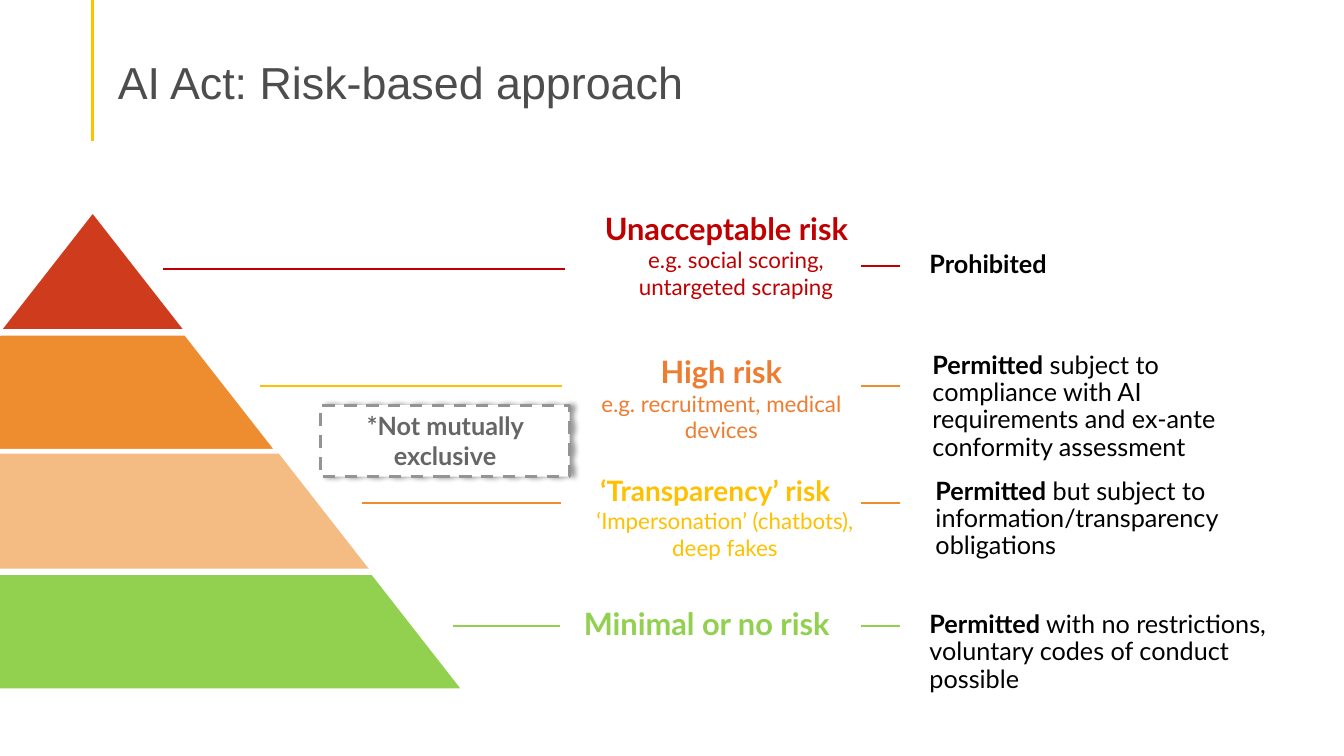
from lxml import etree
from pptx import Presentation
from pptx.dml.color import RGBColor
from pptx.enum.dml import MSO_LINE
from pptx.enum.shapes import MSO_CONNECTOR, MSO_SHAPE
from pptx.enum.text import MSO_ANCHOR, PP_ALIGN
from pptx.oxml.ns import qn
from pptx.util import Inches, Pt

COLORS = {
    "white": "FFFFFF", "black": "000000", "title": "4D4D4D",
    "note": "666666", "dash": "949494", "gold": "FFC000",
    "red": "C00000", "brick": "CF3B1D", "amber": "ED8D2F",
    "orange": "ED7D31", "peach": "F4BB82", "green": "92D050",
}

# Pyramid bands from the top: fill, width of the white outline
BANDS = [("brick", 1), ("amber", 4.5), ("peach", 2.25), ("green", 4.5)]
APEX_X, APEX_Y = 0.92, 2.11
BAND_HEIGHT = 4.75 / 4
BAND_SPREAD = 3.71 / 4

# Box, colour, heading, heading size, heading indent, examples
RISKS = [
    ((5.68, 2.03, 3.05, 1.01), "red", "Unacceptable risk", 22, 0,
     "e.g. social scoring, untargeted scraping"),
    ((5.65, 3.45, 2.82, 1.01), "orange", "High risk", 22, 0.19,
     "e.g. recruitment, medical devices"),
    ((5.6, 4.65, 2.99, 1.25), "gold", "‘Transparency’ risk", 20, 0,
     "‘Impersonation’ (chatbots), deep fakes"),
    ((5.6, 5.95, 2.82, 0.47), "green", "Minimal or no risk", 22, 0, ""),
]

# Box, bold verdict, rest of the sentence
RULES = [
    ((9.12, 2.45, 4.03, 0.37), "Prohibited", ""),
    ((9.15, 3.45, 3.72, 0.92), "Permitted",
     " subject to compliance with AI requirements and ex-ante conformity assessment"),
    ((9.18, 4.7, 3.72, 0.92), "Permitted",
     " but subject to information/transparency obligations"),
    ((9.12, 6.02, 3.72, 0.92), "Permitted",
     " with no restrictions, voluntary codes of conduct possible"),
]

# Start x, end x, y, colour
LEADERS = [
    (1.62, 5.6, 2.67, "red"), (2.58, 5.57, 3.83, "gold"),
    (3.59, 5.56, 4.99, "amber"), (4.49, 5.55, 6.21, "green"),
    (8.54, 8.93, 2.64, "red"), (8.54, 8.93, 3.83, "amber"),
    (8.54, 8.93, 4.99, "amber"), (8.54, 8.93, 6.21, "green"),
]


def rgb(name):
    return RGBColor.from_string(COLORS[name])


def apply_format(target, **values):
    for attribute, value in values.items():
        setattr(target, attribute, value)


def add_text(paragraph, text, size, color, bold=False, font="Lato"):
    run = paragraph.add_run()
    run.text = text
    apply_format(run.font, size=Pt(size), name=font, bold=bold)
    run.font.color.rgb = rgb(color)


def add_text_frame(slide, box, **frame_format):
    frame = slide.shapes.add_textbox(*map(Inches, box)).text_frame
    apply_format(frame, word_wrap=True, **frame_format)
    return frame


def add_line(slide, start, end, color, width):
    line = slide.shapes.add_connector(
        MSO_CONNECTOR.STRAIGHT, *map(Inches, start + end))
    line.line.color.rgb = rgb(color)
    line.line.width = Pt(width)
    etree.SubElement(line._element.spPr, qn("a:effectLst"))


def add_title(slide, text):
    add_line(slide, (0.92, 0), (0.92, 1.4), "gold", 2.25)
    frame = add_text_frame(slide, (1.07, 0.22, 11.5, 0.86),
                           vertical_anchor=MSO_ANCHOR.BOTTOM, margin_bottom=0)
    heading = frame.paragraphs[0]
    heading.line_spacing = 0.9
    add_text(heading, text, 32, "title", font="Arial")


def add_band(slide, level, color, outline):
    """Draw one slice of the pyramid; level 0 is the tip."""
    top = APEX_Y + level * BAND_HEIGHT
    bottom = top + BAND_HEIGHT
    inner, outer = level * BAND_SPREAD, (level + 1) * BAND_SPREAD
    corners = [(APEX_X - outer, bottom), (APEX_X - inner, top),
               (APEX_X + inner, top), (APEX_X + outer, bottom)]
    points = [(Inches(x), Inches(y)) for x, y in corners]
    builder = slide.shapes.build_freeform(*points[0])
    builder.add_line_segments(points[1:], close=True)
    band = builder.convert_to_shape()
    band.shadow.inherit = False
    band.fill.solid()
    band.fill.fore_color.rgb = rgb(color)
    band.line.color.rgb = rgb("white")
    band.line.width = Pt(outline)


def set_indent(paragraph, indent):
    paragraph._p.get_or_add_pPr().set("marL", str(Inches(indent)))


def add_risk(slide, box, color, heading, size, indent, examples):
    frame = add_text_frame(slide, box)
    name = frame.paragraphs[0]
    name.alignment = PP_ALIGN.CENTER
    set_indent(name, indent)
    add_text(name, heading, size, color, bold=True)
    if examples:
        detail = frame.add_paragraph()
        detail.alignment = PP_ALIGN.CENTER
        set_indent(detail, 0.19)
        add_text(detail, examples, 16, color)


def add_rule(slide, box, verdict, condition):
    frame = add_text_frame(slide, box, margin_right=Inches(0.24))
    sentence = frame.paragraphs[0]
    sentence.line_spacing = 0.9
    add_text(sentence, verdict, 18, "black", bold=True)
    if condition:
        add_text(sentence, condition, 18, "black")


def add_shadow(shape):
    effects = etree.SubElement(shape._element.spPr, qn("a:effectLst"))
    shadow = etree.SubElement(effects, qn("a:outerShdw"), blurRad=str(Pt(4)),
                              dist=str(Pt(3)), dir="0", algn="l", rotWithShape="0")
    tint = etree.SubElement(shadow, qn("a:srgbClr"), val=COLORS["black"])
    etree.SubElement(tint, qn("a:alpha"), val="40000")


def add_note(slide, text):
    note = slide.shapes.add_shape(
        MSO_SHAPE.RECTANGLE, *map(Inches, (3.18, 4.02, 2.47, 0.71)))
    note.fill.solid()
    note.fill.fore_color.rgb = rgb("white")
    note.line.color.rgb = rgb("dash")
    apply_format(note.line, width=Pt(2.25), dash_style=MSO_LINE.DASH)
    add_shadow(note)
    apply_format(note.text_frame, word_wrap=True, vertical_anchor=MSO_ANCHOR.TOP)
    remark = note.text_frame.paragraphs[0]
    remark.alignment = PP_ALIGN.CENTER
    add_text(remark, text, 18, "note", bold=True)


def main():
    deck = Presentation()
    apply_format(deck, slide_width=Inches(13.33), slide_height=Inches(7.5))
    slide = deck.slides.add_slide(deck.slide_layouts[6])
    add_title(slide, "AI Act: Risk-based approach")
    for level, (color, outline) in enumerate(BANDS):
        add_band(slide, level, color, outline)
    for risk in RISKS:
        add_risk(slide, *risk)
    for rule in RULES:
        add_rule(slide, *rule)
    for left, right, y, color in LEADERS:
        add_line(slide, (left, y), (right, y), color, 1.5)
    add_note(slide, "*Not mutually exclusive")
    deck.save("out.pptx")


if __name__ == "__main__":
    main()
